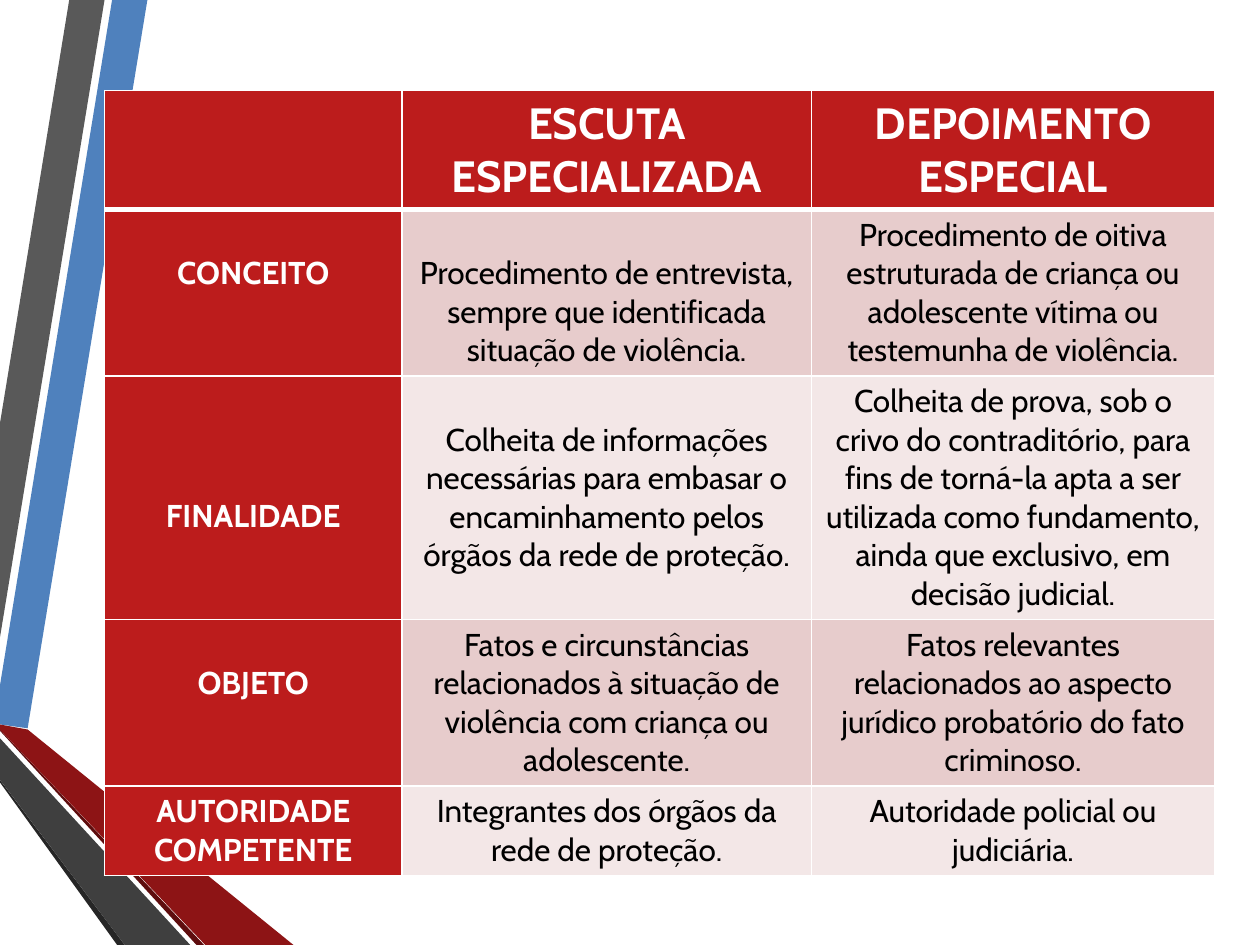
import pptx
import pptx.util
import pptx.dml.color
import pptx.enum.text
import pptx.oxml
import pptx.oxml.ns

Inches = pptx.util.Inches
Pt = pptx.util.Pt
RGB = pptx.dml.color.RGBColor.from_string

theme = {
    "font": "Cabin", "head": 25, "body": 18, "line": 0.304, "pad": 0.05,
    "white": "FFFFFF", "black": "000000", "red": "BC1C1C",
    "bands": ["E7CCCC", "F3E7E7"],
    "blue": "4F81BD", "gray": "595959", "coal": "262626",
    "wine": "5E0D0E", "ruby": "8D1415", "dark": "3F3F3F",
}

deck = pptx.Presentation()
deck.slide_width = Inches(10)
deck.slide_height = Inches(7.5)
slide = deck.slides.add_slide(deck.slide_layouts[6])

stripes = [
    ("blue", [(0, 5.44), (0, 5.75), (0.22, 5.78), (1.17, 0), (0.89, 0)]),
    ("gray", [(0.83, 0), (0.55, 0), (0, 3.36), (0, 5.06)]),
    ("coal", [(0, 6.19), (0, 6.21), (0.93, 7.5), (0.99, 7.5)]),
    ("wine", [(0, 5.79), (0, 5.8), (1.56, 7.5), (1.62, 7.5)]),
    ("ruby", [(0, 5.79), (1.63, 7.5), (2.33, 7.5), (0.22, 5.79), (0, 5.75)]),
    ("dark", [(0, 6.19), (0.99, 7.5), (1.51, 7.5), (0, 5.86)]),
]
for tone, points in stripes:
    spots = [(Inches(x), Inches(y)) for x, y in points]
    pen = slide.shapes.build_freeform(*spots[0])
    pen.add_line_segments(spots[1:], close=True)
    stripe = pen.convert_to_shape()
    stripe.shadow.inherit = False
    stripe.fill.solid()
    stripe.fill.fore_color.rgb = RGB(theme[tone])
    stripe.line.fill.background()


def edge(cell, side, width):
    line = pptx.oxml.parse_xml(
        f'<a:{side} {pptx.oxml.ns.nsdecls("a")} w="{Pt(width)}">'
        f'<a:solidFill><a:srgbClr val="{theme["white"]}"/></a:solidFill></a:{side}>')
    props = cell._tc.get_or_add_tcPr()
    props.insert(len(props) - 1, line)


rows = [
    (0.79, [("", 0), ("ESCUTA\nESPECIALIZADA", 0), ("DEPOIMENTO\nESPECIAL", 0)]),
    (1.1, [
        ("CONCEITO", 1),
        ("Procedimento de entrevista, sempre que identificada situação de violência.", 1),
        ("Procedimento de oitiva estruturada de criança ou adolescente vítima ou "
         "testemunha de violência.", 0)]),
    (1.6, [
        ("FINALIDADE", 3),
        ("Colheita de informações necessárias para embasar o encaminhamento pelos "
         "órgãos da rede de proteção.", 1),
        ("Colheita de prova, sob o crivo do contraditório, para fins de torná-la apta "
         "a ser utilizada como fundamento, ainda que exclusivo, em decisão judicial.", 0)]),
    (1.1, [
        ("OBJETO", 1),
        ("Fatos e circunstâncias relacionados à situação de violência com criança ou "
         "adolescente.", 0),
        ("Fatos relevantes relacionados ao aspecto jurídico probatório do fato "
         "criminoso.", 0)]),
    (0.6, [
        ("AUTORIDADE COMPETENTE", 0),
        ("Integrantes dos órgãos da rede de proteção.", 0),
        ("Autoridade policial ou judiciária.", 0)]),
]
widths = [2.36, 3.25, 3.2]

table = slide.shapes.add_table(
    len(rows), len(widths), Inches(0.83), Inches(0.72),
    Inches(sum(widths)), Inches(sum(row[0] for row in rows))).table
for col, width in enumerate(widths):
    table.columns[col].width = Inches(width)

for row, (height, cells) in enumerate(rows):
    table.rows[row].height = Inches(height)
    for col, (text, drop) in enumerate(cells):
        cell = table.cell(row, col)
        title = row == 0 or col == 0
        cell.fill.solid()
        cell.fill.fore_color.rgb = RGB(
            theme["red"] if title else theme["bands"][(row - 1) % 2])
        edge(cell, "lnL", 0.96)
        edge(cell, "lnR", 0.96)
        edge(cell, "lnT", 3 if row == 1 else 0.96)
        edge(cell, "lnB", 3 if row == 0 else 0.96)
        cell.margin_top = Inches(theme["pad"] + drop * theme["line"])
        cell.vertical_anchor = pptx.enum.text.MSO_ANCHOR.TOP
        cell.text = text
        for para in cell.text_frame.paragraphs:
            para.alignment = pptx.enum.text.PP_ALIGN.CENTER
            para.font.name = theme["font"]
            para.font.size = Pt(theme["body"] if row else theme["head"])
            para.font.bold = title
            para.font.color.rgb = RGB(theme["white"] if title else theme["black"])

deck.save("out.pptx")
